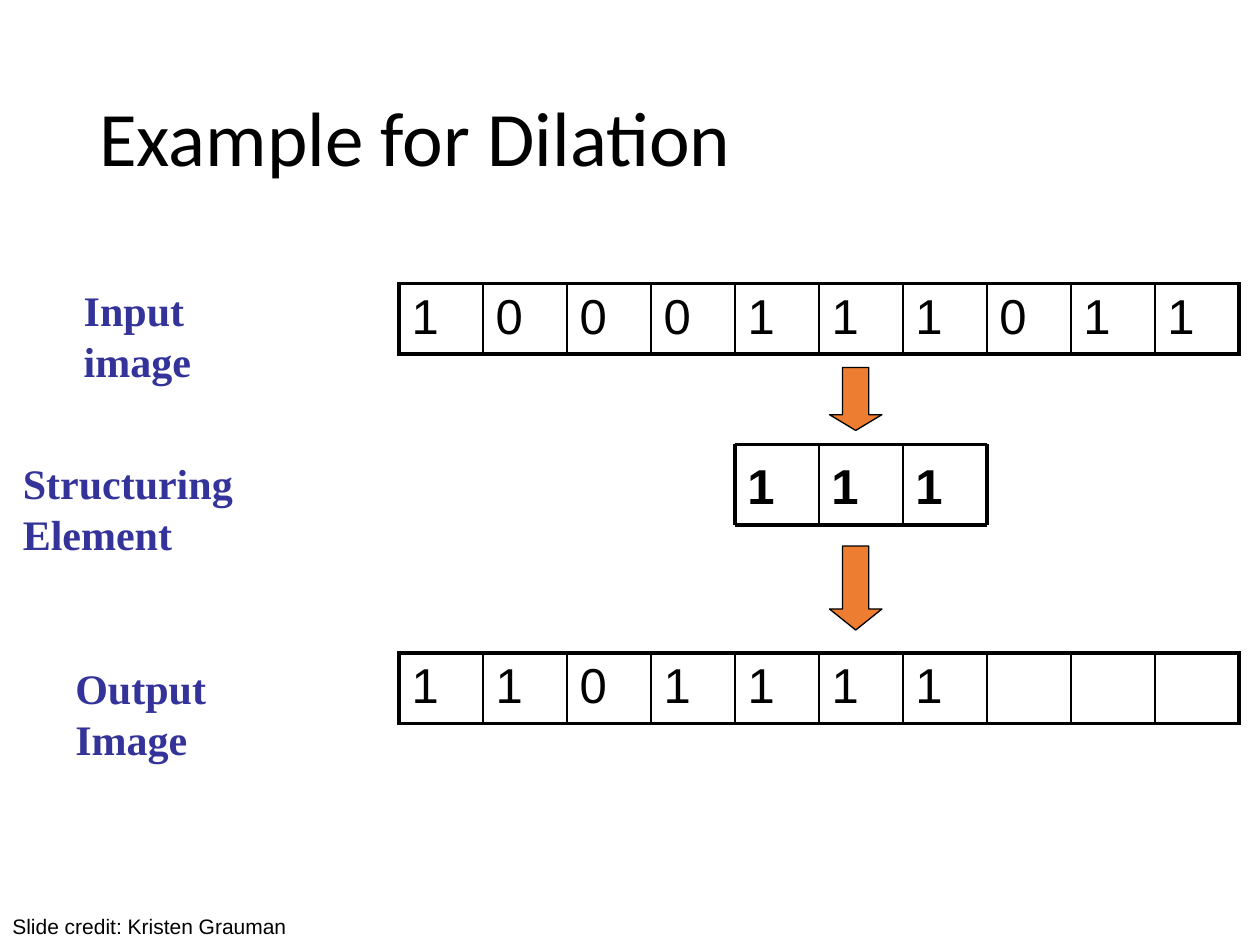
from dataclasses import dataclass

from lxml.etree import SubElement
from pptx import Presentation
from pptx.dml.color import RGBColor
from pptx.enum.shapes import MSO_CONNECTOR as Connector, MSO_SHAPE as Preset
from pptx.enum.text import MSO_ANCHOR as Anchor, PP_ALIGN as Align
from pptx.oxml.ns import qn
from pptx.util import Pt

BLACK, INDIGO, ORANGE = "000000", "333399", "ED7D31"
CELL_WIDTH = 48
THICK, THIN = 2.25, 1


@dataclass
class PixelRow:
    left: float
    top: float
    height: float
    values: str  # one character per cell, a blank for an empty cell


@dataclass
class Label:
    left: float
    top: float
    width: float
    lines: tuple[str, ...]


@dataclass
class Arrow:
    top: float
    height: float
    head: float


IMAGE_ROWS = [
    PixelRow(228, 162, 40.3, "1000111011"),
    PixelRow(228, 373.2, 40.3, "1101111   "),
]
STRUCTURING_ELEMENT = PixelRow(420, 254, 46, "111")
LABELS = [
    Label(40.8, 158.5, 130, ("Input", "image")),
    Label(6, 257.5, 208, ("Structuring", "Element")),
    Label(36, 374.5, 147, ("Output", "Image")),
]
ARROWS = [Arrow(210, 36, 0.3), Arrow(312, 48, 0.4)]


def color(code: str) -> RGBColor:
    return RGBColor.from_string(code)


def add_span(para, text: str, size: float, font: str, code: str = BLACK, bold: bool = False) -> None:
    span = para.add_run()
    span.text = text
    span.font.size = Pt(size)
    span.font.name = font
    span.font.bold = bold
    span.font.color.rgb = color(code)


def add_box(page, left: float, top: float, width: float, height: float):
    box = page.shapes.add_textbox(Pt(left), Pt(top), Pt(width), Pt(height))
    box.text_frame.word_wrap = True
    return box


def add_border(cell, side: str, width: float) -> None:
    line = SubElement(cell._tc.get_or_add_tcPr(), qn(f"a:ln{side}"), w=str(Pt(width)))
    fill = SubElement(line, qn("a:solidFill"))
    SubElement(fill, qn("a:srgbClr"), val=BLACK)


def draw_image_row(page, row: PixelRow) -> None:
    count = len(row.values)
    frame = page.shapes.add_table(1, count, Pt(row.left), Pt(row.top),
                                  Pt(CELL_WIDTH * count), Pt(row.height))
    table = frame.table
    table.first_row = table.horz_banding = False
    for index, value in enumerate(row.values):
        table.columns[index].width = Pt(CELL_WIDTH)
        cell = table.cell(0, index)
        add_border(cell, "L", THICK if index == 0 else THIN)
        add_border(cell, "R", THICK if index == count - 1 else THIN)
        add_border(cell, "T", THICK)
        add_border(cell, "B", THICK)
        cell.fill.background()
        if value.strip():
            add_span(cell.text_frame.paragraphs[0], value, 28, "Arial")


def draw_line(page, x1: float, y1: float, x2: float, y2: float, width: float) -> None:
    line = page.shapes.add_connector(Connector.STRAIGHT, Pt(x1), Pt(y1), Pt(x2), Pt(y2))
    line.line.color.rgb = color(BLACK)
    line.line.width = Pt(width)
    SubElement(line._element.spPr, qn("a:effectLst"))


def draw_structuring_element(page, row: PixelRow) -> None:
    count = len(row.values)
    right, bottom = row.left + CELL_WIDTH * count, row.top + row.height
    for index, value in enumerate(row.values):
        box = add_box(page, row.left + CELL_WIDTH * index, row.top, CELL_WIDTH, row.height)
        box.text_frame.margin_top = Pt(6)
        add_span(box.text_frame.paragraphs[0], value, 28, "Arial", bold=True)
    for y in (row.top, bottom):
        draw_line(page, row.left, y, right, y, THICK)
    for index in range(count + 1):
        x = row.left + CELL_WIDTH * index
        draw_line(page, x, row.top, x, bottom, THICK if index in (0, count) else THIN)


def draw_label(page, label: Label) -> None:
    box = add_box(page, label.left, label.top, label.width, 66)
    para = box.text_frame.paragraphs[0]
    para.line_spacing = Pt(29.3)
    for index, line in enumerate(label.lines):
        if index:
            para.add_line_break()
        add_span(para, line, 24, "Times New Roman", INDIGO, bold=True)


def draw_arrow(page, arrow: Arrow) -> None:
    shape = page.shapes.add_shape(Preset.DOWN_ARROW, Pt(474), Pt(arrow.top), Pt(30), Pt(arrow.height))
    shape.adjustments[0] = 0.5
    shape.adjustments[1] = arrow.head
    shape.shadow.inherit = False
    shape.fill.solid()
    shape.fill.fore_color.rgb = color(ORANGE)
    shape.line.color.rgb = color(BLACK)
    shape.line.width = Pt(0.75)


def draw_title(page, text: str) -> None:
    title = page.shapes.title
    title.left, title.top, title.width, title.height = Pt(49.5), Pt(29), Pt(621), Pt(104)
    title.text_frame.vertical_anchor = Anchor.MIDDLE
    para = title.text_frame.paragraphs[0]
    para.alignment = Align.LEFT
    para.line_spacing = 0.9
    add_span(para, text, 44, "Calibri")


def draw_credit(page, text: str) -> None:
    box = add_box(page, 0, 518.4, 330, 21.6)
    add_span(box.text_frame.paragraphs[0], text, 12, "Arial")


def main() -> None:
    deck = Presentation()
    deck.slide_width, deck.slide_height = Pt(720), Pt(540)
    page = deck.slides.add_slide(deck.slide_layouts.get_by_name("Title Only"))
    draw_title(page, "Example for Dilation")
    for row in IMAGE_ROWS:
        draw_image_row(page, row)
    for label in LABELS:
        draw_label(page, label)
    draw_structuring_element(page, STRUCTURING_ELEMENT)
    for arrow in ARROWS:
        draw_arrow(page, arrow)
    draw_credit(page, "Slide credit: Kristen Grauman")
    deck.save("out.pptx")


if __name__ == "__main__":
    main()
